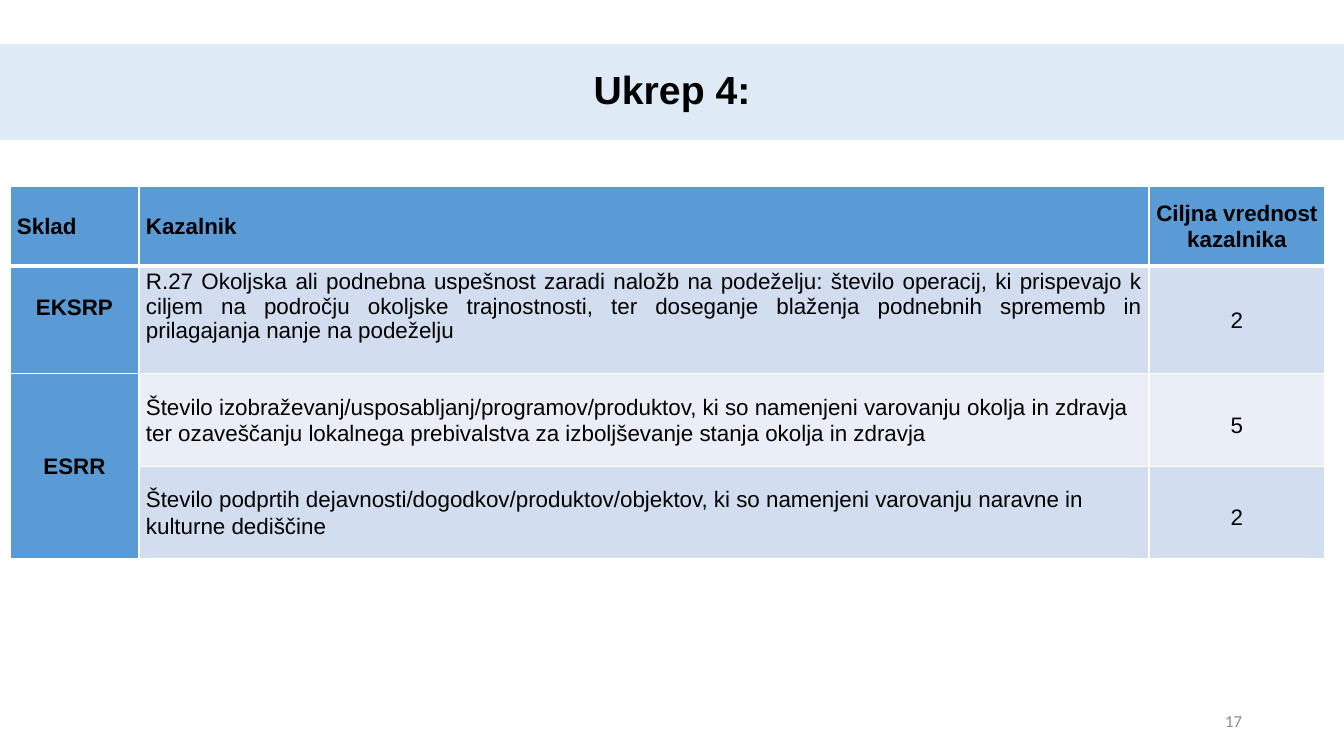
from lxml import etree
from pptx import Presentation
from pptx.dml.color import RGBColor
from pptx.enum.shapes import MSO_SHAPE
from pptx.enum.text import MSO_ANCHOR, PP_ALIGN
from pptx.oxml.ns import qn
from pptx.util import Pt

SCALE = 914400 / 100.8
LEFT, CENTER, RIGHT, JUSTIFY = PP_ALIGN.LEFT, PP_ALIGN.CENTER, PP_ALIGN.RIGHT, PP_ALIGN.JUSTIFY
MIDDLE = MSO_ANCHOR.MIDDLE
RECTANGLE = MSO_SHAPE.RECTANGLE

BLUE, BAND_DARK, BAND_LIGHT = "5B9BD5", "D2DEEF", "EAEFF7"
COLUMN_WIDTHS = [129, 1010, 176]
ROW_HEIGHTS = [80, 104, 93, 92]
BAND_FILLS = [BLUE, BAND_DARK, BAND_LIGHT, BAND_DARK]
INDICATORS = [
    ["Sklad", "Kazalnik", "Ciljna vrednost kazalnika"],
    ["EKSRP",
     "R.27 Okoljska ali podnebna uspešnost zaradi naložb na podeželju: število operacij, "
     "ki prispevajo k ciljem na področju okoljske trajnostnosti, ter doseganje blaženja "
     "podnebnih sprememb in prilagajanja nanje na podeželju", "2"],
    ["ESRR",
     "Število izobraževanj/usposabljanj/programov/produktov, ki so namenjeni varovanju okolja "
     "in zdravja ter ozaveščanju lokalnega prebivalstva za izboljševanje stanja okolja in zdravja",
     "5"],
    ["",
     "Število podprtih dejavnosti/dogodkov/produktov/objektov, ki so namenjeni varovanju "
     "naravne in kulturne dediščine", "2"],
]
ALIGNMENTS = {(0, 0): LEFT, (1, 1): JUSTIFY}
COLUMN_ALIGNMENTS = [CENTER, LEFT, CENTER]
TOP_INSETS = {(2, 2): 9, (3, 2): 9}
BOTTOM_INSETS = {(1, 0): 26, (1, 1): 27}


def px(length):
    """Turn pixels into EMU."""
    return round(length * SCALE)


def color(hex_string):
    """Turn a hex string into a colour."""
    return RGBColor.from_string(hex_string)


def write(frame, text, size, align, font="Arial", ink="000000", bold=False, spacing=1.0):
    """Fill a text frame with one formatted paragraph."""
    frame.word_wrap = True
    frame.text = text
    paragraph = frame.paragraphs[0]
    paragraph.alignment = align
    paragraph.line_spacing = spacing
    for run in paragraph.runs:
        run.font.size = Pt(size)
        run.font.name = font
        run.font.bold = bold
        run.font.color.rgb = color(ink)


def set_borders(cell, widths):
    """Draw white cell borders, in points, keyed by side."""
    properties = cell._tc.get_or_add_tcPr()
    for position, (side, width) in enumerate(widths.items()):
        line = etree.Element(qn(f"a:ln{side}"), w=str(Pt(width)))
        fill = etree.SubElement(line, qn("a:solidFill"))
        etree.SubElement(fill, qn("a:srgbClr"), val="FFFFFF")
        properties.insert(position, line)


def add_title_band(slide, left, top, width, height):
    """Place the pale band with the slide title."""
    band = slide.shapes.add_shape(RECTANGLE, px(left), px(top), px(width), px(height))
    band.shadow.inherit = False
    band.fill.solid()
    band.fill.fore_color.rgb = color("DEEBF7")
    band.line.fill.background()
    band.text_frame.vertical_anchor = MIDDLE
    write(band.text_frame, "Ukrep 4:", 28, CENTER, bold=True, spacing=0.9)


def add_indicator_table(slide, left, top):
    """Place the table of funds, indicators and target values."""
    table = slide.shapes.add_table(
        len(ROW_HEIGHTS), len(COLUMN_WIDTHS), px(left), px(top),
        px(sum(COLUMN_WIDTHS)), px(sum(ROW_HEIGHTS))).table
    for column, width in zip(table.columns, COLUMN_WIDTHS):
        column.width = px(width)
    for r, entries in enumerate(INDICATORS):
        table.rows[r].height = px(ROW_HEIGHTS[r])
        for c, entry in enumerate(entries):
            cell = table.cell(r, c)
            heading = r == 0 or c == 0
            align = ALIGNMENTS.get((r, c), COLUMN_ALIGNMENTS[c])
            cell.margin_left = cell.margin_right = px(7)
            cell.margin_top = px(TOP_INSETS.get((r, c), 0))
            cell.margin_bottom = px(BOTTOM_INSETS.get((r, c), 0))
            cell.vertical_anchor = MIDDLE
            cell.fill.solid()
            cell.fill.fore_color.rgb = color(BLUE if heading else BAND_FILLS[r])
            set_borders(cell, {"L": 1, "R": 1, "T": 3 if r == 1 else 1, "B": 3 if r == 0 else 1})
            write(cell.text_frame, entry, 16, align, bold=heading,
                  spacing=1.0 if align == JUSTIFY else 1.07)
    table.cell(2, 0).merge(table.cell(3, 0))


def add_page_number(slide, left, top, width, height):
    """Place the page number at the lower right."""
    number = slide.shapes.add_textbox(px(left), px(top), px(width), px(height)).text_frame
    number.vertical_anchor = MIDDLE
    write(number, "17", 12, RIGHT, font="Calibri", ink="8C8C8C")


def main():
    """Build and save the slide."""
    deck = Presentation()
    deck.slide_width, deck.slide_height = px(1344), px(756)
    slide = deck.slides.add_slide(deck.slide_layouts[6])
    add_title_band(slide, 0, 44, 1344, 96)
    add_page_number(slide, 950, 701, 302, 40)
    add_indicator_table(slide, 10, 186)
    deck.save("out.pptx")


if __name__ == "__main__":
    main()
